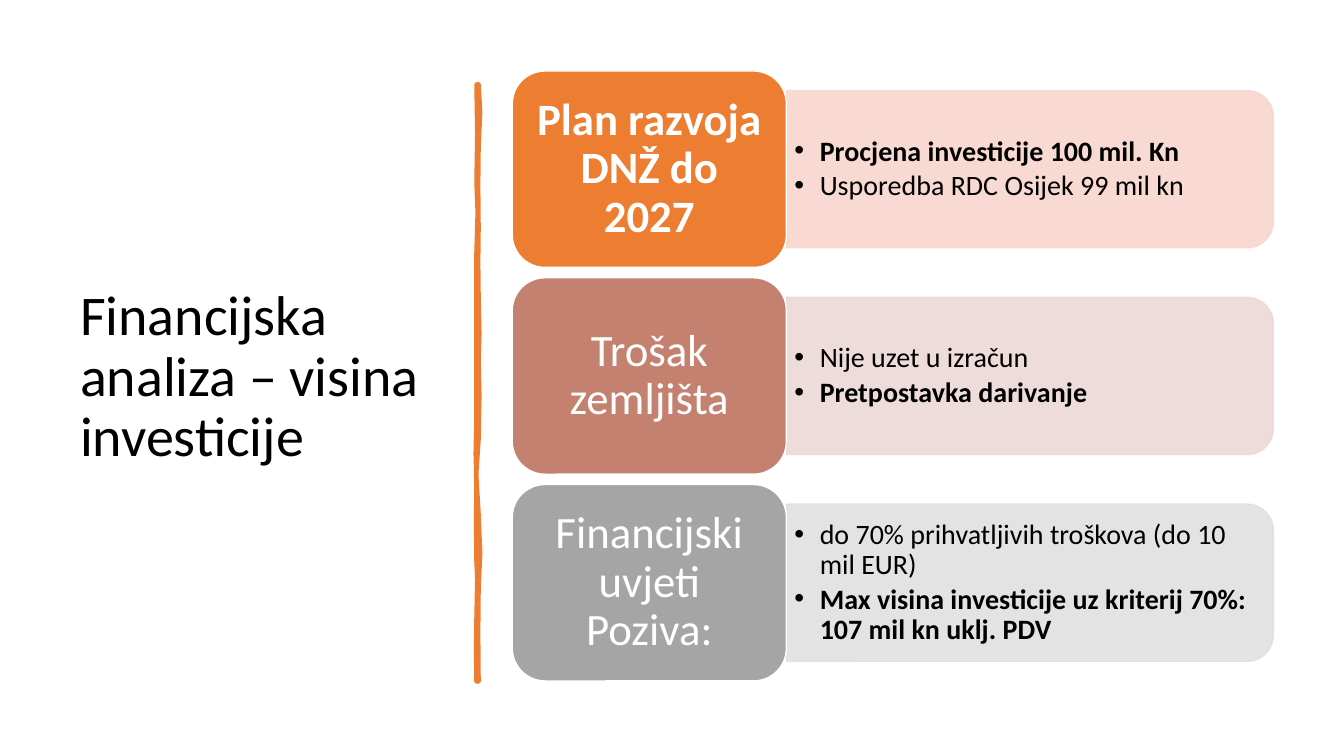
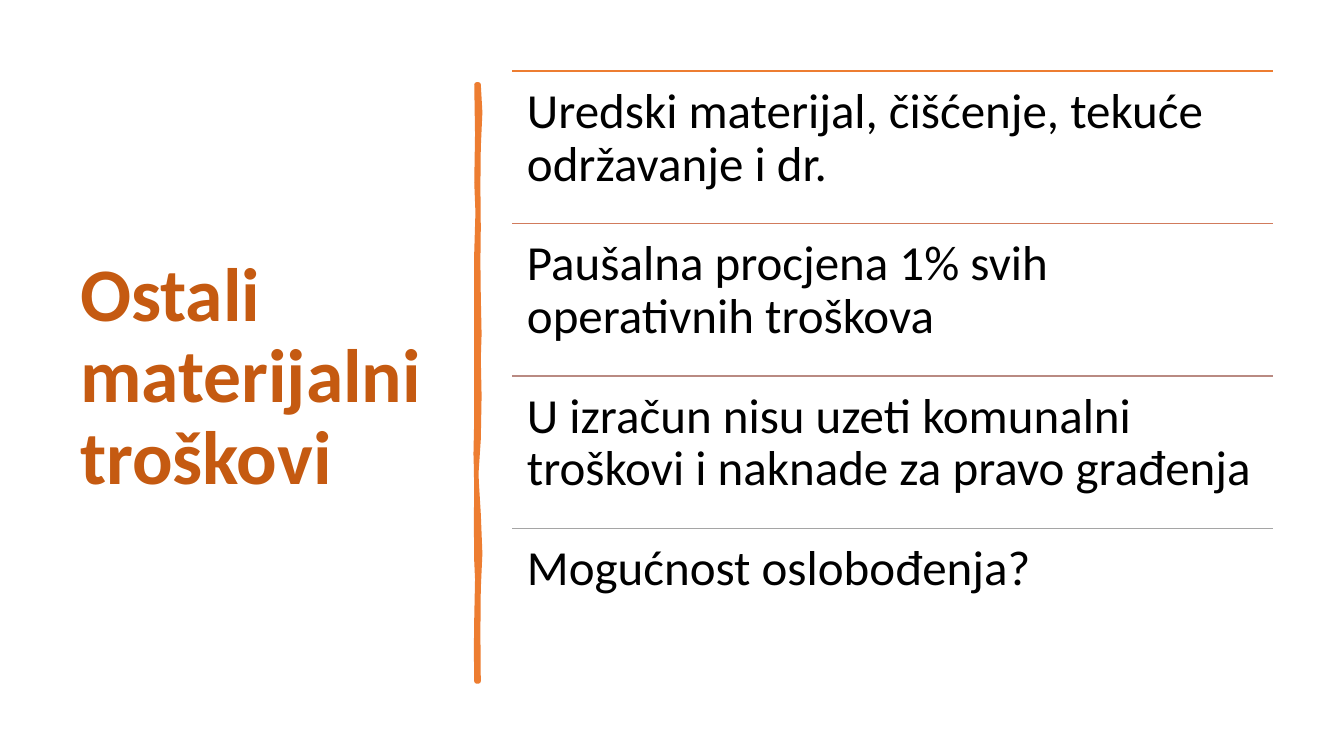
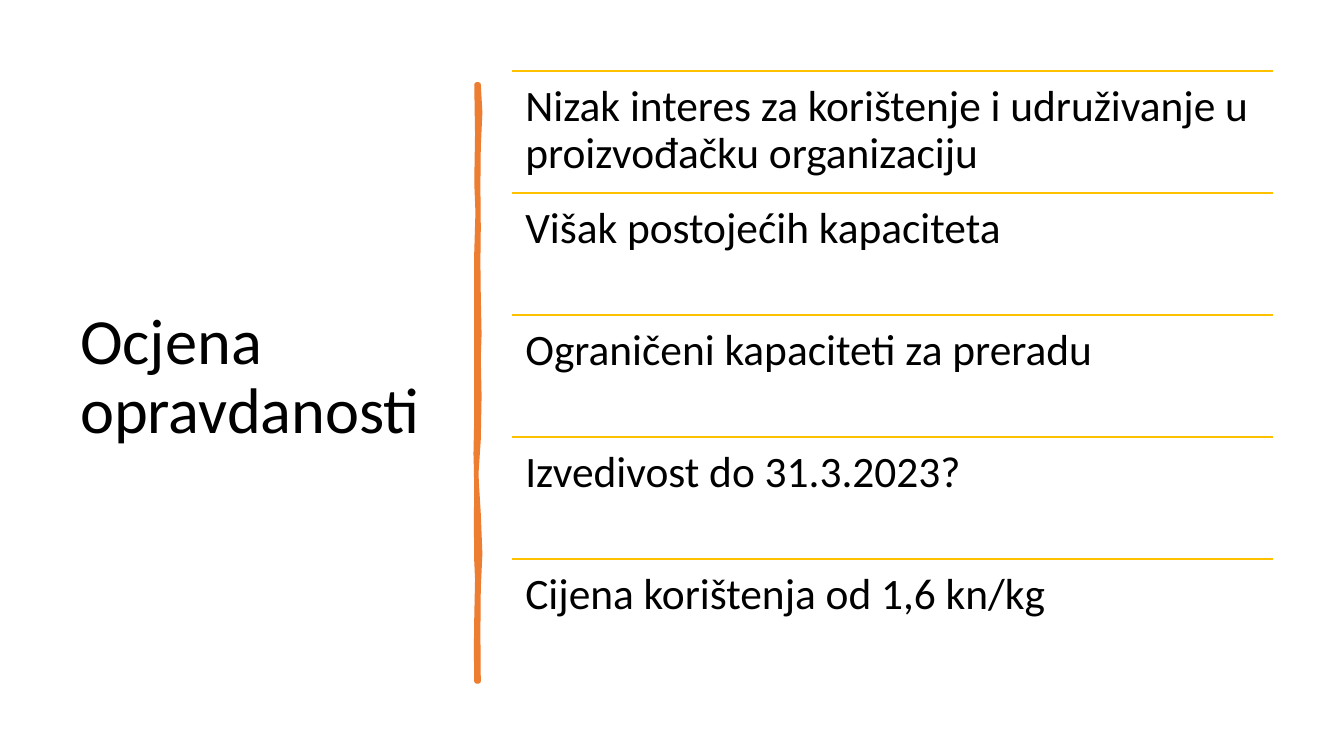
from dataclasses import dataclass

from lxml.etree import SubElement
from pptx import Presentation
from pptx.dml.color import RGBColor
from pptx.enum.shapes import MSO_CONNECTOR, MSO_SHAPE
from pptx.enum.text import MSO_ANCHOR, PP_ALIGN
from pptx.oxml.ns import qn
from pptx.util import Cm, Pt


@dataclass(frozen=True)
class Theme:
    font: str = "Calibri"
    text: str = "000000"
    light: str = "FFFFFF"
    accent: str = "ED7D31"
    dark_accent: str = "C55A11"
    clay: str = "C48170"
    grey: str = "A5A5A5"
    gold: str = "FFC000"
    title_size: int = 40
    label_size: int = 32
    bullet_size: int = 20
    thin_line: float = 1
    brush_line: float = 3.25


THEME = Theme()

CONTENT_LEFT, CONTENT_TOP = 12.91, 1.79
CONTENT_WIDTH, CONTENT_HEIGHT = 19.18, 15.37
LABEL_WIDTH, LABEL_GAP = 6.91, 0.26
PANEL_HEIGHT = 3.96

BRUSH_OUTLINE = [
    (12.06, 2.13), (12.1, 2.83), (12.06, 3.71), (12.05, 4.69), (12.06, 5.74),
    (12.05, 6.59), (12.06, 7.47), (12.08, 8.42), (12.06, 9.04), (12.08, 9.98),
    (12.06, 11.07), (12, 11.97), (12.06, 12.95), (12.1, 13.95), (12.06, 14.83),
    (12.05, 15.94), (12.06, 17.17), (12.01, 17.17), (12, 16.38), (12.01, 15.57),
    (12.03, 14.6), (12.01, 14.15), (12, 13.18), (12.01, 12.12), (11.99, 11.44),
    (12.01, 10.54), (12.01, 9.61), (12.01, 8.51), (12.01, 7.37), (12.01, 6.35),
    (12.04, 5.35), (12.01, 4.6), (12.03, 3.38), (12.01, 2.13),
]


def rgb(color):
    return RGBColor.from_string(color)


def cm_box(*lengths):
    return [Cm(length) for length in lengths]


def paint(shape, fill, line, width=THEME.thin_line):
    shape.shadow.inherit = False
    shape.fill.solid()
    shape.fill.fore_color.rgb = rgb(fill)
    shape.line.color.rgb = rgb(line)
    shape.line.width = Pt(width)


def set_opacity(shape, percent):
    for color in shape.element.spPr.iter(qn("a:srgbClr")):
        SubElement(color, qn("a:alpha"), val=str(percent * 1000))


def set_frame(frame, anchor, inset_x, inset_y):
    frame.word_wrap = True
    frame.vertical_anchor = anchor
    frame.margin_left = frame.margin_right = Cm(inset_x)
    frame.margin_top = frame.margin_bottom = Cm(inset_y)


def style_paragraph(paragraph, size, color=THEME.text, bold=False, align=PP_ALIGN.LEFT):
    paragraph.alignment = align
    paragraph.line_spacing = 0.9
    for run in paragraph.runs:
        run.font.name = THEME.font
        run.font.size = Pt(size)
        run.font.bold = bold
        run.font.color.rgb = rgb(color)


def add_bullet(paragraph):
    paragraph.space_after = Pt(3)
    properties = paragraph._p.get_or_add_pPr()
    indent = Cm(0.64)
    properties.set("marL", str(indent))
    properties.set("indent", str(-indent))
    SubElement(properties, qn("a:buFont"), typeface="Arial")
    SubElement(properties, qn("a:buChar"), char="•")


def add_text(slide, box, text, size, anchor, inset_x, inset_y, **style):
    frame = slide.shapes.add_textbox(*cm_box(*box)).text_frame
    set_frame(frame, anchor, inset_x, inset_y)
    frame.text = text
    for paragraph in frame.paragraphs:
        style_paragraph(paragraph, size, **style)
    return frame


def add_brush_stroke(slide):
    start, *outline = [cm_box(*point) for point in BRUSH_OUTLINE]
    builder = slide.shapes.build_freeform(*start)
    builder.add_line_segments(outline, close=True)
    paint(builder.convert_to_shape(), THEME.accent, THEME.accent, THEME.brush_line)


def add_titled_slide(deck, title, size=THEME.title_size, **style):
    slide = deck.slides.add_slide(deck.slide_layouts[6])
    add_text(slide, (1.77, 1.77, 9.5, 15.52), title, size,
             MSO_ANCHOR.MIDDLE, 0.25, 0.13, **style)
    add_brush_stroke(slide)
    return slide


def add_panel(slide, middle, tint, bullets):
    left = CONTENT_LEFT + LABEL_WIDTH
    width = CONTENT_WIDTH - LABEL_WIDTH
    panel = slide.shapes.add_shape(
        MSO_SHAPE.ROUND_2_SAME_RECTANGLE,
        *cm_box(left + (width - PANEL_HEIGHT) / 2, middle - width / 2,
                PANEL_HEIGHT, width))
    panel.rotation = 90
    paint(panel, tint, tint)
    set_opacity(panel, 90)
    text_height = PANEL_HEIGHT - 0.38
    frame = add_text(slide, (left, middle - text_height / 2, width - 0.2, text_height),
                     "\n".join(text for text, _ in bullets), THEME.bullet_size,
                     MSO_ANCHOR.MIDDLE, 0.2, 0.1)
    for paragraph, (_, bold) in zip(frame.paragraphs, bullets):
        add_bullet(paragraph)
        paragraph.runs[0].font.bold = bold


def add_label(slide, top, height, color, text, bold):
    label = slide.shapes.add_shape(
        MSO_SHAPE.ROUNDED_RECTANGLE, *cm_box(CONTENT_LEFT, top, LABEL_WIDTH, height))
    paint(label, color, THEME.light)
    set_frame(label.text_frame, MSO_ANCHOR.MIDDLE, 0.33, 0.18)
    label.text_frame.text = text
    style_paragraph(label.text_frame.paragraphs[0], THEME.label_size,
                    THEME.light, bold, PP_ALIGN.CENTER)


def add_label_rows(slide, rows):
    height = (CONTENT_HEIGHT - LABEL_GAP * (len(rows) - 1)) / len(rows)
    for index, (label, bold, color, tint, bullets) in enumerate(rows):
        top = CONTENT_TOP + index * (height + LABEL_GAP)
        add_panel(slide, top + height / 2, tint, bullets)
        add_label(slide, top, height, color, label, bold)


def add_rule(slide, top, color):
    rule = slide.shapes.add_connector(
        MSO_CONNECTOR.STRAIGHT,
        *cm_box(CONTENT_LEFT, top, CONTENT_LEFT + CONTENT_WIDTH, top))
    rule.line.color.rgb = rgb(color)
    rule.line.width = Pt(THEME.thin_line)
    SubElement(rule.element.spPr, qn("a:effectLst"))


def add_ruled_list(slide, rows, size, inset):
    height = CONTENT_HEIGHT / len(rows)
    for index, (text, color) in enumerate(rows):
        top = CONTENT_TOP + index * height
        add_rule(slide, top, color)
        add_text(slide, (CONTENT_LEFT, top, CONTENT_WIDTH, height), text, size,
                 MSO_ANCHOR.TOP, inset, inset)


def main():
    deck = Presentation()
    deck.slide_width, deck.slide_height = Cm(33.87), Cm(19.05)

    investment = add_titled_slide(deck, "Financijska analiza – visina investicije")
    add_label_rows(investment, [
        ("Plan razvoja DNŽ do 2027", True, THEME.accent, "F8D7CE", [
            ("Procjena investicije 100 mil. Kn", True),
            ("Usporedba RDC Osijek 99 mil kn", False)]),
        ("Trošak zemljišta", False, THEME.clay, "EDD9D7", [
            ("Nije uzet u izračun", False),
            ("Pretpostavka darivanje", True)]),
        ("Financijski uvjeti Poziva:", False, THEME.grey, "E1E1E1", [
            ("do 70% prihvatljivih troškova (do 10 mil EUR)", False),
            ("Max visina investicije uz kriterij 70%: 107 mil kn uklj. PDV", True)]),
    ])

    material_costs = add_titled_slide(deck, "Ostali materijalni troškovi", 54,
                                      color=THEME.dark_accent, bold=True)
    add_ruled_list(material_costs, [
        ("Uredski materijal, čišćenje, tekuće održavanje i dr.", THEME.accent),
        ("Paušalna procjena 1% svih operativnih troškova", "D17B5C"),
        ("U izračun nisu uzeti komunalni troškovi i naknade za pravo građenja", "B98A82"),
        ("Mogućnost oslobođenja?", THEME.grey),
    ], 35, 0.37)

    justification = add_titled_slide(deck, "Ocjena opravdanosti", 46)
    findings = [
        "Nizak interes za korištenje i udruživanje u proizvođačku organizaciju",
        "Višak postojećih kapaciteta",
        "Ograničeni kapaciteti za preradu",
        "Izvedivost do 31.3.2023?",
        "Cijena korištenja od 1,6 kn/kg",
    ]
    add_ruled_list(justification, [(text, THEME.gold) for text in findings], 31, 0.33)

    deck.save("out.pptx")


if __name__ == "__main__":
    main()
